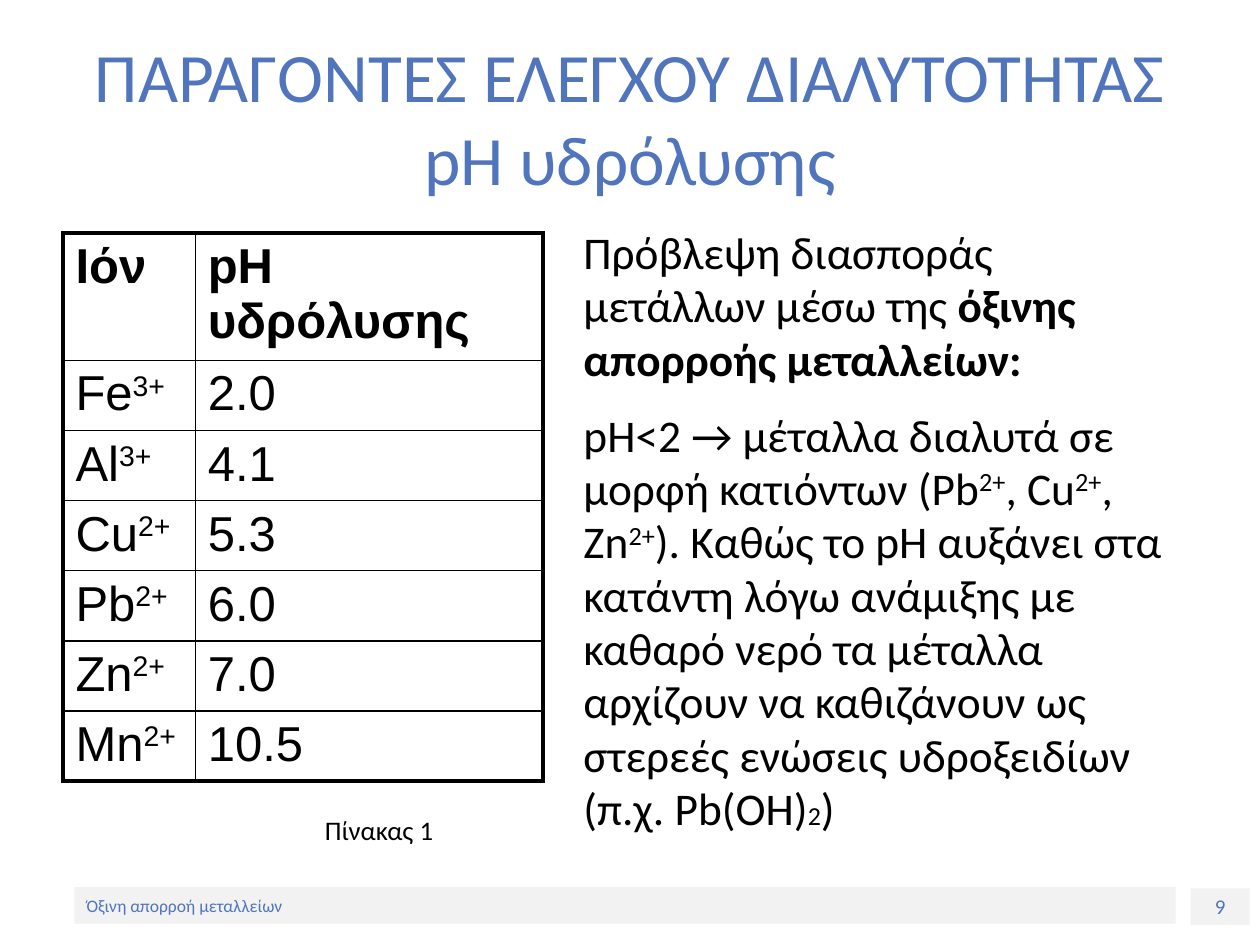
from lxml import etree
from pptx import Presentation
from pptx.dml.color import RGBColor
from pptx.enum.shapes import MSO_SHAPE
from pptx.enum.text import MSO_ANCHOR, MSO_AUTO_SIZE, PP_ALIGN
from pptx.oxml.ns import qn
from pptx.util import Pt

RECT = MSO_SHAPE.RECTANGLE
MIDDLE, TOP = MSO_ANCHOR.MIDDLE, MSO_ANCHOR.TOP
LEFT, CENTER = PP_ALIGN.LEFT, PP_ALIGN.CENTER
FIXED = MSO_AUTO_SIZE.NONE
BLUE = RGBColor(0x50, 0x75, 0xBC)
BLACK = RGBColor(0, 0, 0)
GREY = RGBColor(0xF2, 0xF2, 0xF2)


def add_run(para, text, size, color=BLACK, font="Calibri", bold=False, rise=0):
    run = para.add_run()
    run.text = text
    run.font.size = Pt(size)
    run.font.name = font
    run.font.bold = bold
    run.font.color.rgb = color
    if rise:
        run._r.get_or_add_rPr().set("baseline", str(rise * 1000))


def place(shape, left, top, width, height):
    shape.left, shape.top = Pt(left), Pt(top)
    shape.width, shape.height = Pt(width), Pt(height)


deck = Presentation()
deck.slide_width, deck.slide_height = Pt(720), Pt(540)
slide = deck.slides.add_slide(deck.slide_layouts[1])
shapes = slide.shapes

bars = [
    ("9", 680.4, 507.6, 33.8, 12, CENTER),
    ("Όξινη απορροή μεταλλείων", 42.5, 506.9, 629.3, 10, LEFT),
]
for text, left, top, width, size, align in bars:
    bar = shapes.add_shape(RECT, Pt(left), Pt(top), Pt(width), Pt(20.9))
    bar.shadow.inherit = False
    bar.fill.solid()
    bar.fill.fore_color.rgb = GREY
    bar.line.fill.background()
    bar.text_frame.vertical_anchor = MIDDLE
    para = bar.text_frame.paragraphs[0]
    para.alignment = align
    add_run(para, text, size, BLUE)

title = shapes.title
place(title, 36, 21.6, 648, 90)
title.text_frame.auto_size = FIXED
title.text_frame.vertical_anchor = MIDDLE
para = title.text_frame.paragraphs[0]
para.alignment = CENTER
add_run(para, "ΠΑΡΑΓΟΝΤΕΣ ΕΛΕΓΧΟΥ ΔΙΑΛΥΤΟΤΗΤΑΣ", 39.6, BLUE)
para.add_line_break()
add_run(para, "pH υδρόλυσης", 39.6, BLUE)

body = slide.placeholders[1]
place(body, 326.2, 126, 357.8, 356.4)
frame = body.text_frame
frame.auto_size = FIXED
frame.vertical_anchor = TOP
intro, detail = frame.paragraphs[0], frame.add_paragraph()
for para in (intro, detail):
    para.space_before = Pt(13)
    para.line_spacing = 0.98
    props = para._p.get_or_add_pPr()
    props.set("marL", "0")
    props.set("indent", "0")
    etree.SubElement(props, qn("a:buNone"))
add_run(intro, "Πρόβλεψη διασποράς μετάλλων μέσω της ", 25.9)
add_run(intro, "όξινης απορροής μεταλλείων:", 25.9, bold=True)
lead = "pH<2 → μέταλλα διαλυτά σε μορφή κατιόντων (Pb"
for text in (lead, ", Cu", ", Zn"):
    add_run(detail, text, 25.9)
    add_run(detail, "2+", 25.9, rise=30)
add_run(detail, "). Καθώς το pH αυξάνει στα κατάντη λόγω ανάμιξης με καθαρό νερό "
        "τα μέταλλα αρχίζουν να καθιζάνουν ως στερεές ενώσεις υδροξειδίων "
        "(π.χ. Pb(OH)", 25.9)
add_run(detail, "2", 14.8)
add_run(detail, ")", 25.9)

rows = [
    ("Ιόν", "", "pH υδρόλυσης"),
    ("Fe", "3+", "2.0"),
    ("Al", "3+", "4.1"),
    ("Cu", "2+", "5.3"),
    ("Pb", "2+", "6.0"),
    ("Zn", "2+", "7.0"),
    ("Mn", "2+", "10.5"),
]
last = len(rows) - 1
table = shapes.add_table(len(rows), 2, Pt(36), Pt(133.2), Pt(274.3), Pt(319)).table
table.columns[0].width, table.columns[1].width = Pt(75.6), Pt(198.7)
for i, (ion, charge, value) in enumerate(rows):
    table.rows[i].height = Pt(40.1 if i else 72.7)
    for j, text in enumerate((ion, value)):
        cell = table.cell(i, j)
        para = cell.text_frame.paragraphs[0]
        add_run(para, text, 28, font="Arial", bold=i == 0)
        if j == 0 and charge:
            add_run(para, charge, 28, font="Arial", rise=30)
        outer = {"L": j == 0, "R": j == 1, "T": i == 0, "B": i == last}
        props = cell._tc.get_or_add_tcPr()
        for side, thick in outer.items():
            line = etree.SubElement(props, qn("a:ln" + side))
            line.set("w", str(Pt(2.25 if thick else 1)))
            fill = etree.SubElement(line, qn("a:solidFill"))
            etree.SubElement(fill, qn("a:srgbClr")).set("val", str(BLACK))
        cell.fill.background()

note = shapes.add_textbox(Pt(178.6), Pt(463), Pt(124.6), Pt(22.3))
note.text_frame.word_wrap = True
note.text_frame.vertical_anchor = MIDDLE
add_run(note.text_frame.paragraphs[0], "Πίνακας 1", 15.3)

deck.save("out.pptx")
